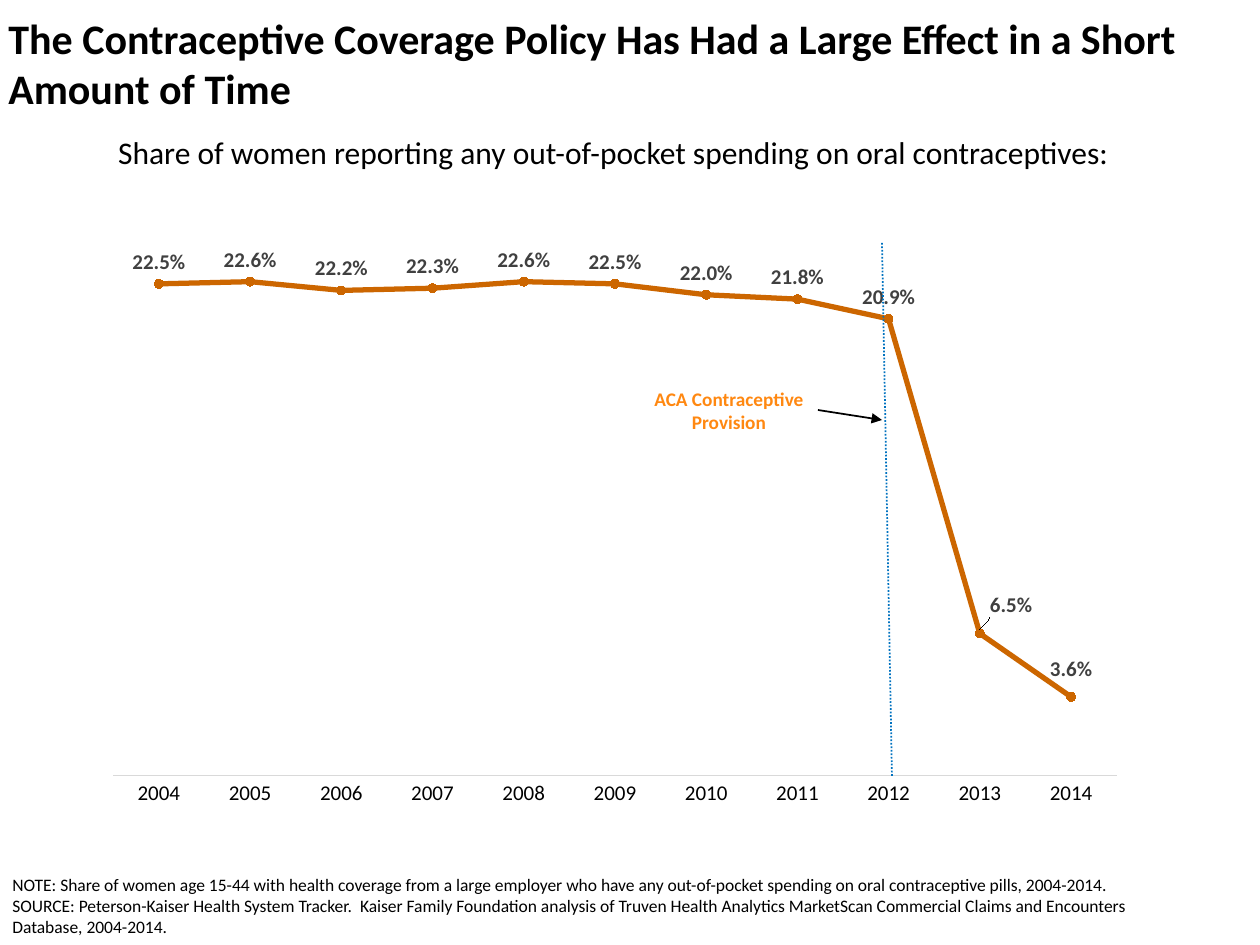
from copy import deepcopy

from lxml import etree
from pptx import Presentation
from pptx import util as u
from pptx.chart.data import CategoryChartData
from pptx.dml.color import RGBColor
from pptx.enum import chart as charts, dml, shapes, text
from pptx.oxml import parse_xml
from pptx.oxml.ns import nsdecls, qn

BLACK = RGBColor(0x00, 0x00, 0x00)
GREY = RGBColor(0x40, 0x40, 0x40)
PALE = RGBColor(0xD9, 0xD9, 0xD9)
BLUE = RGBColor(0x00, 0x72, 0xC0)
ORANGE = RGBColor(0xFF, 0x88, 0x11)
RUST = RGBColor(0xCC, 0x66, 0x00)
LEFT, CENTER = text.PP_ALIGN.LEFT, text.PP_ALIGN.CENTER
TOP, MIDDLE, BOTTOM = text.MSO_ANCHOR.TOP, text.MSO_ANCHOR.MIDDLE, text.MSO_ANCHOR.BOTTOM


def px(*lengths):
    return [u.Emu(round(length * 914400 / 126)) for length in lengths]


def set_font(font, size, color, bold=False):
    looks = {"name": "Calibri", "size": u.Pt(size), "bold": bold}
    for key, value in looks.items():
        setattr(font, key, value)
    font.color.rgb = color


deck = Presentation()
deck.slide_width, deck.slide_height = px(1260, 945)
page = deck.slides.add_slide(deck.slide_layouts[6])

# Line chart
data = CategoryChartData(number_format="0.0%")
data.categories = [str(year) for year in range(2004, 2015)]
data.add_series("Series 1", (0.225, 0.226, 0.222, 0.223, 0.226, 0.225,
                             0.220, 0.218, 0.209, 0.065, 0.036))
chart = page.shapes.add_chart(
    charts.XL_CHART_TYPE.LINE_MARKERS, *px(105, 212, 1042, 616), data).chart
chart.has_legend = chart.has_title = False
set_font(chart.font, 10, BLACK)

years = chart.category_axis
years.major_tick_mark = charts.XL_TICK_MARK.NONE
years.format.line.color.rgb = PALE
years.format.line.width = u.Pt(0.75)
set_font(years.tick_labels.font, 12, BLACK)
share = chart.value_axis
share.minimum_scale, share.maximum_scale = 0, 0.25
share.has_major_gridlines = share.visible = False

plot = chart.plots[0]
plot.vary_by_categories = False
series = plot.series[0]
series.smooth = False
series.format.line.color.rgb = RUST
series.format.line.width = u.Pt(3)
marker = series.marker
marker.style, marker.size = charts.XL_MARKER_STYLE.CIRCLE, 5
marker.format.fill.solid()
marker.format.fill.fore_color.rgb = RUST
marker.format.line.color.rgb = RUST

# Value labels, the last two nudged off the line
labels = series.data_labels
labels.show_value = True
labels.number_format, labels.number_format_is_linked = "0.0%", False
labels.position = charts.XL_LABEL_POSITION.ABOVE
set_font(labels.font, 12, GREY, True)
number_format = labels._element.find(qn("c:numFmt"))
for index, shift in {9: 0.03, 10: 0.0}.items():
    label = series.points[index].data_label
    label.position = charts.XL_LABEL_POSITION.ABOVE
    set_font(label.font, 12, GREY, True)
    element = label._dLbl
    element.insert(1, parse_xml(
        f'<c:layout {nsdecls("c")}><c:manualLayout><c:x val="{shift}"/>'
        '<c:y val="-0.01"/></c:manualLayout></c:layout>'))
    element.insert(2, deepcopy(number_format))

# Fixed inner plot area
area = chart._chartSpace.chart.plotArea
for old in area.findall(qn("c:layout")):
    area.remove(old)
layout = etree.Element(qn("c:layout"))
manual = etree.SubElement(layout, qn("c:manualLayout"))
for tag, value in (("layoutTarget", "inner"), ("xMode", "edge"), ("yMode", "edge"),
                   ("x", 0.008), ("y", 0.028), ("w", 0.963), ("h", 0.887)):
    etree.SubElement(manual, qn(f"c:{tag}")).set("val", str(value))
area.insert(0, layout)

# Text boxes: place, size, colour, bold, alignment, anchor, paragraphs
for place, size, color, bold, align, anchor, lines in (
    ((0, 867, 1147, 76), 10, BLACK, False, LEFT, BOTTOM, (
        "NOTE: Share of women age 15-44 with health coverage from a large employer who have "
        "any out-of-pocket spending on oral contraceptive pills, 2004-2014.",
        "SOURCE: Peterson-Kaiser Health System Tracker.  Kaiser Family Foundation analysis of "
        "Truven Health Analytics MarketScan Commercial Claims and Encounters Database, "
        "2004-2014.")),
    ((-4, 0, 1235, 126), 24, BLACK, True, LEFT, MIDDLE, (
        "The Contraceptive Coverage Policy Has Had a Large Effect in a Short Amount of Time",)),
    ((640, 381, 178, 59), 11, ORANGE, True, CENTER, TOP, ("ACA Contraceptive Provision",)),
    ((92, 127, 1043, 50), 18, BLACK, False, CENTER, TOP, (
        "Share of women reporting any out-of-pocket spending on oral contraceptives:",)),
):
    frame = page.shapes.add_textbox(*px(*place)).text_frame
    frame.word_wrap, frame.vertical_anchor = True, anchor
    for number, line in enumerate(lines):
        para = frame.add_paragraph() if number else frame.paragraphs[0]
        para.alignment = align
        span = para.add_run()
        span.text = line
        set_font(span.font, size, color, bold)

# Dotted policy date line and its arrow
for ends, color, dash, arrow in (
    ((882, 243, 892, 777), BLUE, dml.MSO_LINE.ROUND_DOT, False),
    ((818, 410, 882, 420), BLACK, None, True),
):
    rule = page.shapes.add_connector(shapes.MSO_CONNECTOR.STRAIGHT, *px(*ends))
    rule.line.color.rgb, rule.line.width = color, u.Pt(1)
    if dash:
        rule.line.dash_style = dash
    if arrow:
        etree.SubElement(rule.line._get_or_add_ln(), qn("a:tailEnd")).set("type", "triangle")
    etree.SubElement(rule._element.spPr, qn("a:effectLst"))

deck.save("out.pptx")
